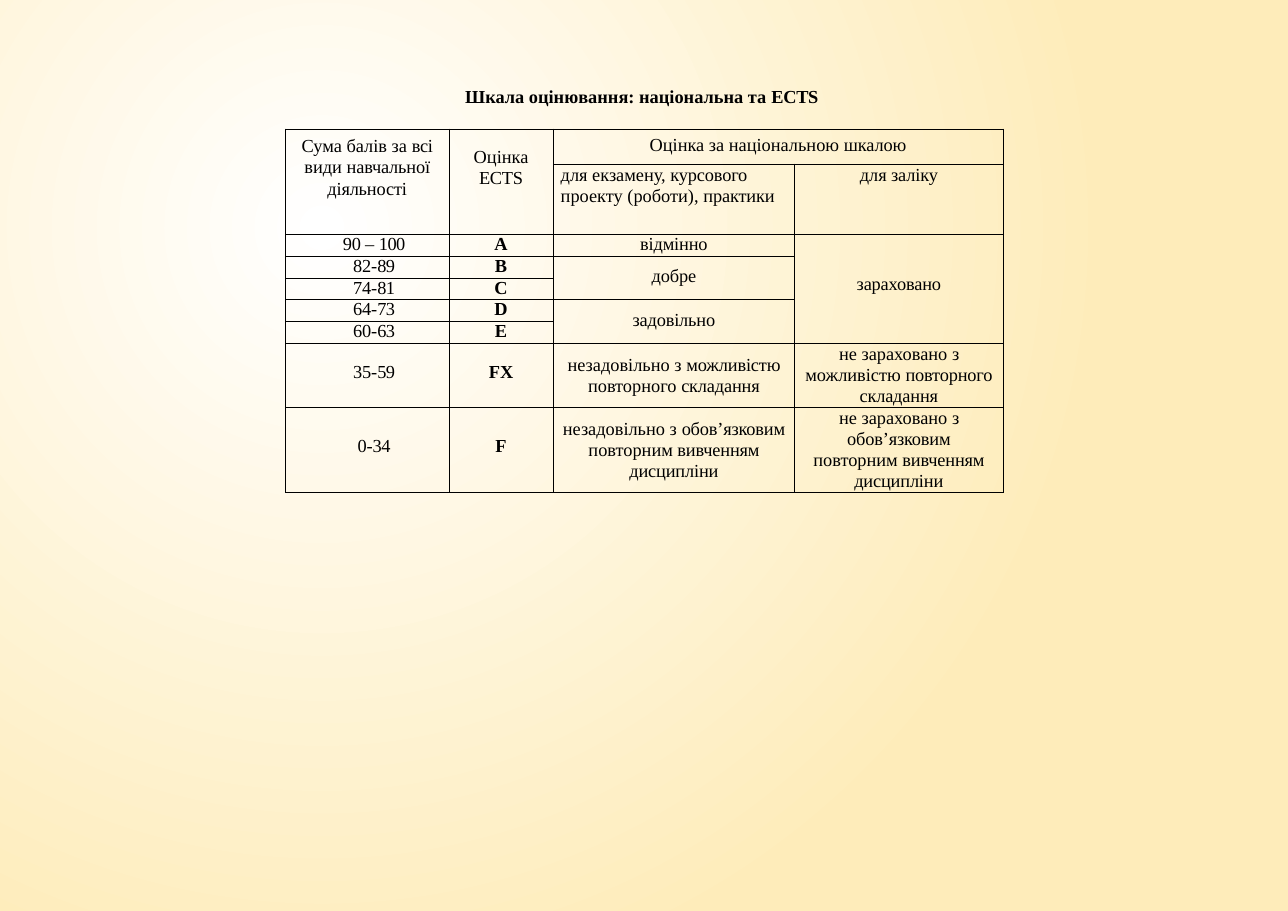
import pptx
import pptx.dml.color
import pptx.enum.text
import pptx.oxml
import pptx.oxml.ns
import pptx.util
from lxml import etree

Pt = pptx.util.Pt
ALIGN = pptx.enum.text.PP_ALIGN
FONT = "Times New Roman"
INK = "000000"
COLUMN_WIDTHS = [107, 68, 158, 136]
ROW_HEIGHTS = [23, 45.7] + [14.25] * 5 + [41.75, 56]

# Merged areas: first row, first column, last row, last column
SPANS = [(0, 0, 1, 0), (0, 1, 1, 1), (0, 2, 0, 3),
         (2, 3, 6, 3), (3, 2, 4, 2), (5, 2, 6, 2)]

# Headings and verdicts: row, column, top margin, side margin, (text, spacing) runs
WORDED_CELLS = [
    (0, 0, 4.5, 10, [("Сума балів за ", 0), ("всі ", -0.2), ("види ", 0),
                     ("навчальної діяльності", -0.1)]),
    (0, 1, 11.5, 15, [("Оцінка ", 0), ("ECTS", -0.2)]),
    (0, 2, 3.5, 0, [("Оцінка за національною", 0), (" шкалою", -0.1)]),
    (1, 2, 0, 5, [("для екзамену,", 0), (" курсового ", -0.1),
                  ("проекту (роботи), ", 0), ("практики", -0.1)]),
    (1, 3, 0, 0, [("для", 0), (" заліку", -0.1)]),
    (2, 2, 0, 0, [("відмінно", -0.1)]),
    (2, 3, 25.75, 0, [("зараховано", -0.1)]),
    (3, 2, 6.25, 0, [("добре", -0.1)]),
    (5, 2, 6.25, 0, [("задовільно", -0.1)]),
    (7, 2, 7.5, 5, [("незадовільно з ", 0), ("можливістю ", -0.1),
                    ("повторного ", 0), ("складання", -0.1)]),
    (7, 3, 0, 5, [("не зараховано ", 0), ("з ", -0.5), ("можливістю ", 0),
                  ("повторного складання", -0.1)]),
    (8, 2, 7.5, 5, [("незадовільно з ", 0), ("обов’язковим ", -0.1),
                    ("повторним", 0), (" вивченням дисципліни", -0.1)]),
    (8, 3, 0, 10, [("не зараховано ", 0), ("з ", -0.5), ("обов’язковим ", -0.1),
                   ("повторним", 0), (" вивченням дисципліни", -0.1)]),
]

# Grades from row 2 down: top margin, points in two runs, ECTS letter
GRADES = [
    (0, "90 – ", "100", "А"), (0, "82-", "89", "В"), (0, "74-", "81", "С"),
    (0, "64-", "73", "D"), (0, "60-", "63", "Е"),
    (12.75, "35-", "59", "FX"), (19.25, "0-", "34", "F"),
]


def color(hex_value):
    return pptx.dml.color.RGBColor.from_string(hex_value)


def add_runs(paragraph, runs, bold=False):
    for text, spacing in runs:
        run = paragraph.add_run()
        run.text = text
        run.font.name = FONT
        run.font.size = Pt(12)
        run.font.bold = bold
        run.font.color.rgb = color(INK)
        if spacing:
            run.font._element.set("spc", str(round(spacing * 100)))


def paint_background(slide):
    fill = slide.background.fill
    fill.gradient()
    for stop, shade in zip(fill.gradient_stops, ("FFFFFF", "FEECBA")):
        stop.color.rgb = color(shade)
    # Circular gradient centred in the upper left quarter
    gradient = fill._xPr.find(pptx.oxml.ns.qn("a:gradFill"))
    gradient.remove(gradient.find(pptx.oxml.ns.qn("a:lin")))
    circle = etree.SubElement(gradient, pptx.oxml.ns.qn("a:path"), {"path": "circle"})
    etree.SubElement(circle, pptx.oxml.ns.qn("a:fillToRect"),
                     {"l": "50000", "t": "50000", "r": "100000", "b": "100000"})


def place_title(slide, left, top, width, height):
    heading = slide.shapes.title
    heading.left, heading.top = Pt(left), Pt(top)
    heading.width, heading.height = Pt(width), Pt(height)
    frame = heading.text_frame
    frame.margin_left = frame.margin_right = frame.margin_bottom = 0
    frame.margin_top = Pt(1)
    frame.vertical_anchor = pptx.enum.text.MSO_ANCHOR.TOP
    frame.auto_size = pptx.enum.text.MSO_AUTO_SIZE.NONE
    frame.word_wrap = True
    paragraph = frame.paragraphs[0]
    paragraph.alignment = ALIGN.LEFT
    paragraph.line_spacing = 1.0
    add_runs(paragraph, [("Шкала оцінювання: національна та ", 0), ("ECTS", -0.2)], True)


def outline_cell(cell):
    properties = cell._tc.get_or_add_tcPr()
    for side in ("lnL", "lnR", "lnT", "lnB"):
        border = etree.SubElement(properties, pptx.oxml.ns.qn("a:" + side),
                                  {"w": str(Pt(0.5))})
        solid = etree.SubElement(border, pptx.oxml.ns.qn("a:solidFill"))
        etree.SubElement(solid, pptx.oxml.ns.qn("a:srgbClr"), {"val": INK})
    cell.fill.background()


def fill_cell(cell, runs, top=0, left=0, right=0, bold=False,
              line=13.8, alignment=ALIGN.CENTER):
    cell.margin_top = Pt(top)
    cell.margin_left, cell.margin_right = Pt(left), Pt(right)
    paragraph = cell.text_frame.paragraphs[0]
    paragraph.alignment = alignment
    paragraph.line_spacing = Pt(line)
    add_runs(paragraph, runs, bold)


def place_grade_table(slide, left, top):
    table = slide.shapes.add_table(
        len(ROW_HEIGHTS), len(COLUMN_WIDTHS), Pt(left), Pt(top),
        Pt(sum(COLUMN_WIDTHS)), Pt(sum(ROW_HEIGHTS))).table
    table.first_row = table.horz_banding = False
    for column, width in zip(table.columns, COLUMN_WIDTHS):
        column.width = Pt(width)
    for row, height in zip(table.rows, ROW_HEIGHTS):
        row.height = Pt(height)

    # Borders and merged areas
    for cell in table.iter_cells():
        cell.margin_left = cell.margin_right = 0
        cell.margin_top = cell.margin_bottom = 0
        outline_cell(cell)
    for first_row, first_column, last_row, last_column in SPANS:
        table.cell(first_row, first_column).merge(table.cell(last_row, last_column))

    # Headings and verdicts
    for row, column, margin, side, runs in WORDED_CELLS:
        alignment = ALIGN.LEFT if (row, column) == (1, 2) else ALIGN.CENTER
        line = 13.3 if row == 2 else 13.8
        fill_cell(table.cell(row, column), runs, margin, side, side,
                  line=line, alignment=alignment)

    # Points and letters
    for row, (margin, start, end, letter) in enumerate(GRADES, 2):
        fill_cell(table.cell(row, 0), [(start, -0.1), (end, -0.3)], margin, left=9, line=13.3)
        fill_cell(table.cell(row, 1), [(letter, 0)], margin, bold=True, line=13.3)


def main():
    presentation = pptx.Presentation()
    presentation.slide_width, presentation.slide_height = Pt(841.7), Pt(595.45)
    slide = presentation.slides.add_slide(presentation.slide_layouts[5])
    paint_background(slide)
    place_title(slide, 304, 54.7, 236, 16.6)
    place_grade_table(slide, 186.5, 84.25)
    presentation.save("out.pptx")


if __name__ == "__main__":
    main()
